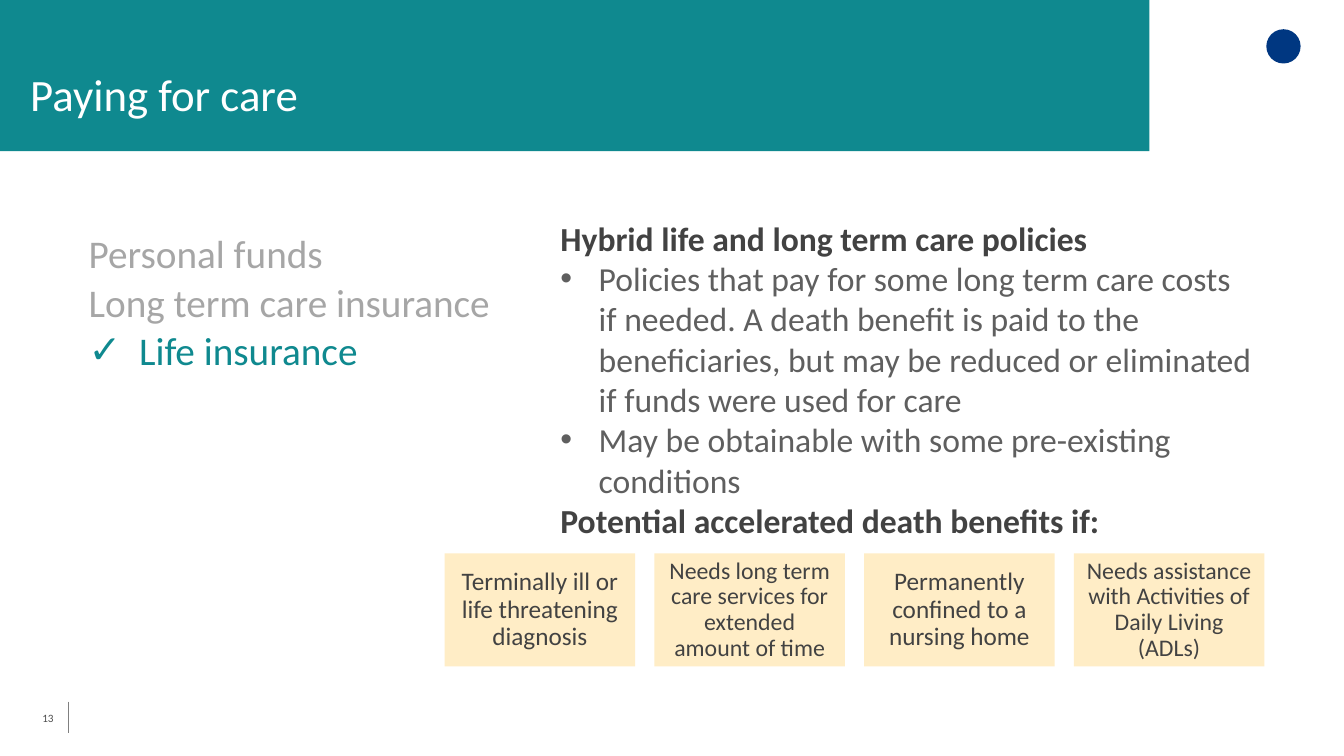
from lxml import etree
from pptx import Presentation, util as u
from pptx.dml.color import RGBColor
from pptx.enum import shapes, text
from pptx.oxml import ns

PX = 9144  # 100 px to the inch
TEAL = RGBColor(0x0F, 0x89, 0x8F)
CREAM = RGBColor(0xFF, 0xED, 0xC6)
NAVY = RGBColor(0x00, 0x37, 0x81)
WHITE = RGBColor(0xFF, 0xFF, 0xFF)
DARK = RGBColor(0x42, 0x42, 0x42)
BODY = RGBColor(0x5F, 0x5F, 0x5F)
PALE = RGBColor(0xA6, 0xA6, 0xA6)
RULE = RGBColor(0x80, 0x80, 0x80)
FOOT = RGBColor(0x4D, 0x4D, 0x4D)

deck = Presentation()
deck.slide_width, deck.slide_height = 1333 * PX, 750 * PX
slide = deck.slides.add_slide(deck.slide_layouts[6])


def block(box, fill=None, kind=shapes.MSO_SHAPE.RECTANGLE):
    """Add a filled shape, or a text box when there is no fill."""
    box = [n * PX for n in box]
    if fill is None:
        return slide.shapes.add_textbox(*box)
    shape = slide.shapes.add_shape(kind, *box)
    shape.shadow.inherit = False
    shape.fill.solid()
    shape.fill.fore_color.rgb = fill
    shape.line.fill.background()
    return shape


def write(shape, lines, pad, anchor, form):
    """Fill a shape with lines of (words, size, colour, bold, mark, indent)."""
    frame = shape.text_frame
    frame.word_wrap = True
    frame.vertical_anchor = anchor
    for side, gap in zip(("left", "top", "right", "bottom"), pad):
        setattr(frame, "margin_" + side, gap * PX)
    for i, (words, size, tint, bold, mark, dent) in enumerate(lines):
        para = frame.add_paragraph() if i else frame.paragraphs[0]
        for key, val in form.items():
            setattr(para, key, val)
        run = para.add_run()
        run.text = words
        font = {"name": "Calibri", "size": u.Pt(size), "bold": bold}
        for key, val in font.items():
            setattr(run.font, key, val)
        run.font.color.rgb = tint
        if mark:
            props = para._p.get_or_add_pPr()
            props.set("marL", str(dent * PX))
            props.set("indent", str(-dent * PX))
            etree.SubElement(props, ns.qn("a:buFont")).set("typeface", "Arial")
            etree.SubElement(props, ns.qn("a:buChar")).set("char", mark)


TOP, MID, LOW = (text.MSO_ANCHOR.TOP, text.MSO_ANCHOR.MIDDLE,
                 text.MSO_ANCHOR.BOTTOM)
LEFT, CENTER = text.PP_ALIGN.LEFT, text.PP_ALIGN.CENTER
INSET = (10, 5, 10, 5)

# Title band and badge
write(block((0, 0, 1140, 150), TEAL),
      [("Paying for care", 32, WHITE, False, None, 0)],
      (30, 30, 30, 30), LOW, {"alignment": LEFT, "space_before": u.Pt(6)})
block((1256, 29, 34, 34), NAVY, shapes.MSO_SHAPE.OVAL)

# Ways to pay
write(block((88, 233, 485, 119)),
      [("Personal funds", 28, PALE, False, None, 0),
       ("Long term care insurance", 28, PALE, False, None, 0),
       ("Life insurance", 28, TEAL, False, "✓", 50)],
      (0, 0, 0, 0), TOP, {"line_spacing": 0.9, "space_after": u.Pt(4.3)})

# Policy details
write(block((546, 211, 708, 333)),
      [("Hybrid life and long term care policies", 24, DARK, True, None, 0),
       ("Policies that pay for some long term care costs if needed. "
        "A death benefit is paid to the beneficiaries, but may be reduced "
        "or eliminated if funds were used for care",
        24, BODY, False, "•", 38),
       ("May be obtainable with some pre-existing conditions",
        24, BODY, False, "•", 38),
       ("Potential accelerated death benefits if:", 24, DARK, True, None, 0)],
      INSET, TOP, {"alignment": LEFT})

# Benefit cards
cards = [("Terminally ill or life threatening diagnosis", 18),
         ("Needs long term care services for extended amount of time", 17),
         ("Permanently confined to a nursing home", 18),
         ("Needs assistance with Activities of Daily Living (ADLs)", 17)]
for i, (words, size) in enumerate(cards):
    write(block((441 + 208 * i, 549, 189, 112), CREAM),
          [(words, size, DARK, False, None, 0)],
          INSET, MID, {"alignment": CENTER, "line_spacing": 0.9})

# Page number and rule
write(block((42, 692, 40, 40)), [("13", 8, FOOT, False, None, 0)],
      (0, 6, 0, 6), MID, {"alignment": LEFT})
rule = slide.shapes.add_connector(shapes.MSO_CONNECTOR.STRAIGHT,
                                  68 * PX, 696 * PX, 68 * PX, 727 * PX)
rule.line.color.rgb = RULE
rule.line.width = u.Pt(0.75)
etree.SubElement(rule._element.spPr, ns.qn("a:effectLst"))

deck.save("out.pptx")
